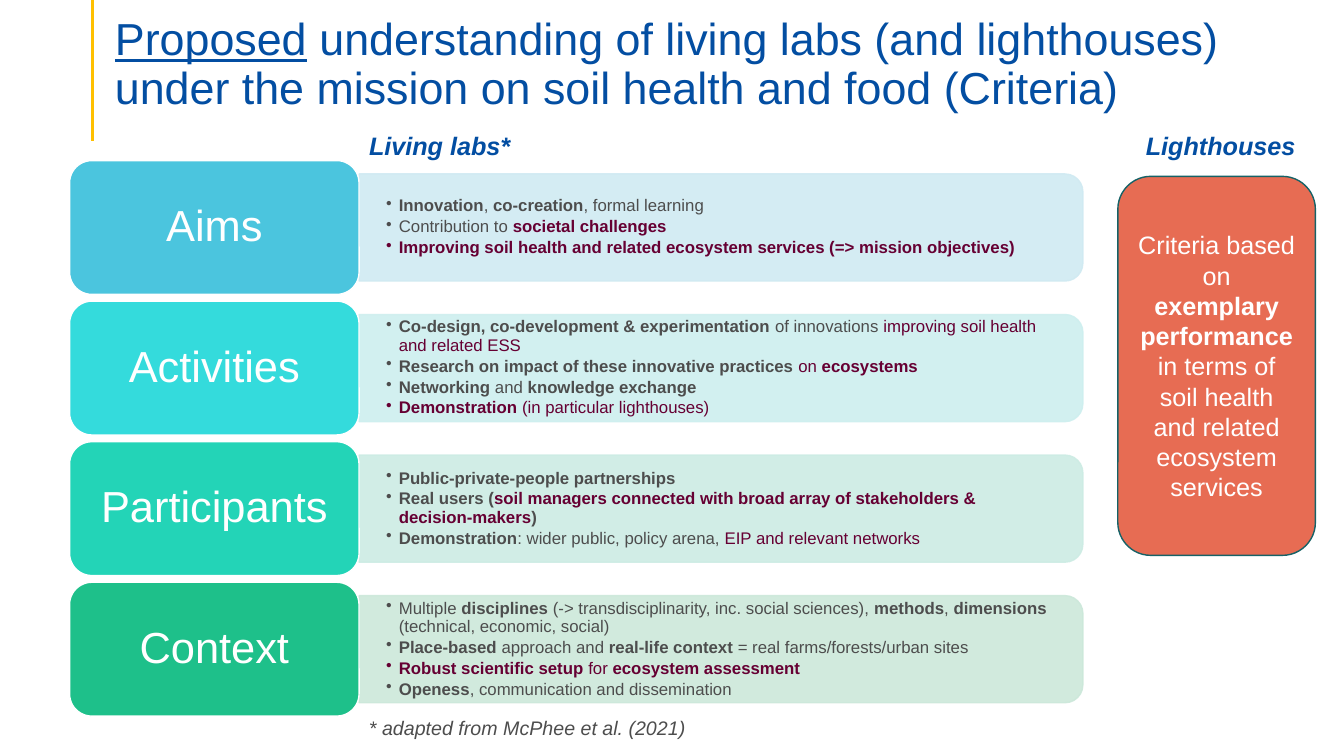
from dataclasses import dataclass

from lxml.etree import SubElement
from pptx import Presentation
from pptx.dml.color import RGBColor
from pptx.enum.shapes import MSO_CONNECTOR as Connector, MSO_SHAPE as Shape
from pptx.enum.text import MSO_ANCHOR as Anchor, MSO_AUTO_SIZE as AutoSize, PP_ALIGN as Align
from pptx.oxml.ns import qn
from pptx.util import Pt


@dataclass(frozen=True)
class Theme:
    """Colours and type sizes of the slide."""
    font: str = "Arial"
    blue: str = "034EA2"
    grey: str = "4D4D4D"
    plum: str = "660033"
    white: str = "FFFFFF"
    gold: str = "FFC000"
    coral: str = "E76C53"
    teal: str = "166267"
    title: int = 32
    label: int = 31
    heading: int = 18
    note: int = 14
    body: int = 12


THEME = Theme()
STYLES = {
    "": (THEME.grey, False),
    "bold": (THEME.grey, True),
    "plum": (THEME.plum, False),
    "bold plum": (THEME.plum, True),
}
CRITERIA = [
    ("Aims", "4BC5DE", "D0EAF2", [
        [("Innovation", "bold"), (", ", ""), ("co-creation", "bold"), (", formal learning", "")],
        [("Contribution to ", ""), ("societal challenges", "bold plum")],
        [("Improving soil health and related ecosystem services (=> mission objectives)",
          "bold plum")],
    ]),
    ("Activities", "34DBDC", "CEEFEF", [
        [("Co-design, co-development & experimentation ", "bold"), ("of innovations ", ""),
         ("improving soil health and related ESS", "plum")],
        [("Research on impact of these innovative practices ", "bold"), ("on ", "plum"),
         ("ecosystems", "bold plum")],
        [("Networking", "bold"), (" and ", ""), ("knowledge exchange", "bold")],
        [("Demonstration", "bold plum"), (" (in particular lighthouses)", "plum")],
    ]),
    ("Participants", "23D4B7", "CDECE4", [
        [("Public-private-people partnerships", "bold")],
        [("Real users (", "bold"),
         ("soil managers connected with broad array of stakeholders & decision-makers",
          "bold plum"), (")", "bold")],
        [("Demonstration", "bold"), (": wider public, policy arena, ", ""),
         ("EIP and relevant networks", "plum")],
    ]),
    ("Context", "1EC08A", "CCE8DA", [
        [("Multiple ", ""), ("disciplines ", "bold"),
         ("(-> transdisciplinarity, inc. social sciences), ", ""), ("methods", "bold"),
         (", ", ""), ("dimensions", "bold"), (" (technical, economic, social)", "")],
        [("Place-based", "bold"), (" approach and ", ""), ("real-life context ", "bold"),
         ("= real farms/forests/urban sites", "")],
        [("Robust scientific setup ", "bold plum"), ("for ", "plum"),
         ("ecosystem assessment", "bold plum")],
        [("Openess", "bold"), (", communication and dissemination", "")],
    ]),
]
LABEL_LEFT, LABEL_TOP, LABEL_WIDTH, LABEL_HEIGHT = 49.7, 114.7, 206.8, 95.6
PANEL_LEFT, PANEL_WIDTH, PANEL_HEIGHT = LABEL_LEFT + LABEL_WIDTH, 517, 76.5
BODY_WIDTH, BODY_HEIGHT = 513.4, 69.1
ROW_PITCH = 100.4


def assign(target, **formats):
    """Set each named attribute on the target."""
    for name, value in formats.items():
        setattr(target, name, value)


def set_frame(frame, anchor=Anchor.TOP, wrap=True, insets=(7.2, 3.6, 7.2, 3.6)):
    """Set wrapping, anchor and insets of a text frame."""
    left, top, right, bottom = map(Pt, insets)
    assign(frame, auto_size=AutoSize.NONE, word_wrap=wrap, vertical_anchor=anchor,
           margin_left=left, margin_top=top, margin_right=right, margin_bottom=bottom)


def add_span(para, text, size, color, **formats):
    """Append a formatted run to a paragraph."""
    span = para.add_run()
    span.text = text
    assign(span.font, name=THEME.font, size=Pt(size), **formats)
    span.font.color.rgb = RGBColor.from_string(color)


def add_block(page, kind, frame, fill, line, weight=1):
    """Add a flat filled shape with an outline."""
    block = page.shapes.add_shape(kind, *map(Pt, frame))
    block.shadow.inherit = False
    block.fill.solid()
    block.fill.fore_color.rgb = RGBColor.from_string(fill)
    block.line.color.rgb = RGBColor.from_string(line)
    block.line.width = Pt(weight)
    return block


def add_title(page):
    """Place and fill the title placeholder."""
    title = page.shapes.title
    assign(title, left=Pt(74.9), top=Pt(19.4), width=Pt(828), height=Pt(61.9))
    set_frame(title.text_frame, Anchor.BOTTOM, insets=(7.2, 3.6, 7.2, 0))
    para = title.text_frame.paragraphs[0]
    assign(para, alignment=Align.LEFT, line_spacing=0.9)
    add_span(para, "Proposed", THEME.title, THEME.blue, underline=True)
    add_span(para, " understanding of living labs (and lighthouses) under the mission "
             "on soil health and food (Criteria)", THEME.title, THEME.blue, underline=False)


def add_rule(page):
    """Draw the vertical line beside the title."""
    rule = page.shapes.add_connector(Connector.STRAIGHT, Pt(66.2), Pt(0), Pt(66.2), Pt(100.8))
    rule.line.color.rgb = RGBColor.from_string(THEME.gold)
    rule.line.width = Pt(2.25)
    SubElement(rule._element.spPr, qn("a:effectLst"))


def add_caption(page, text, frame, size, color, bold):
    """Add one line of italic text."""
    box = page.shapes.add_textbox(*map(Pt, frame))
    set_frame(box.text_frame, wrap=False)
    add_span(box.text_frame.paragraphs[0], text, size, color, bold=bold, italic=True)


def add_panel(page, middle, tint):
    """Add a translucent panel with rounded right corners, centred on a row."""
    frame = (PANEL_LEFT + (PANEL_WIDTH - PANEL_HEIGHT) / 2, middle - PANEL_WIDTH / 2,
             PANEL_HEIGHT, PANEL_WIDTH)
    panel = add_block(page, Shape.ROUND_2_SAME_RECTANGLE, frame, tint, tint)
    panel.rotation = 90
    for color in panel._element.spPr.iter(qn("a:srgbClr")):
        SubElement(color, qn("a:alpha"), val="90000")


def add_bullets(page, middle, points):
    """Add the bulleted text of a row."""
    box = page.shapes.add_textbox(Pt(PANEL_LEFT), Pt(middle - BODY_HEIGHT / 2),
                                  Pt(BODY_WIDTH), Pt(BODY_HEIGHT))
    frame = box.text_frame
    set_frame(frame, Anchor.MIDDLE, insets=(19.4, 10, 19.4, 10))
    for index, spans in enumerate(points):
        para = frame.add_paragraph() if index else frame.paragraphs[0]
        assign(para, line_spacing=0.9, space_after=Pt(2))
        properties = para._p.get_or_add_pPr()
        properties.set("marL", str(Pt(9)))
        properties.set("indent", str(-Pt(9)))
        SubElement(properties, qn("a:buChar"), char="•")
        for text, style in spans:
            color, bold = STYLES[style]
            add_span(para, text, THEME.body, color, bold=bold)


def add_label(page, top, text, fill):
    """Add the coloured heading block of a row."""
    label = add_block(page, Shape.ROUNDED_RECTANGLE,
                      (LABEL_LEFT, top, LABEL_WIDTH, LABEL_HEIGHT), fill, THEME.white)
    set_frame(label.text_frame, Anchor.MIDDLE, insets=(9.4, 4.3, 9.4, 4.3))
    para = label.text_frame.paragraphs[0]
    assign(para, alignment=Align.CENTER, line_spacing=0.9)
    add_span(para, text, THEME.label, THEME.white)


def add_lighthouse_card(page):
    """Add the card with the lighthouse criteria."""
    card = add_block(page, Shape.ROUNDED_RECTANGLE, (798.5, 126, 141.1, 270.7),
                     THEME.coral, THEME.teal)
    set_frame(card.text_frame, Anchor.MIDDLE)
    para = card.text_frame.paragraphs[0]
    para.alignment = Align.CENTER
    for text, bold in [("Criteria based on ", False), ("exemplary performance ", True),
                       ("in terms of soil health and related ecosystem services", False)]:
        add_span(para, text, THEME.heading, THEME.white, bold=bold)


def main():
    """Build the slide and save the deck."""
    deck = Presentation()
    assign(deck, slide_width=Pt(960), slide_height=Pt(540))
    page = deck.slides.add_slide(deck.slide_layouts[5])
    add_rule(page)
    add_title(page)
    for row, (name, fill, tint, points) in enumerate(CRITERIA):
        top = LABEL_TOP + row * ROW_PITCH
        middle = top + LABEL_HEIGHT / 2
        add_panel(page, middle, tint)
        add_bullets(page, middle, points)
        add_label(page, top, name, fill)
    add_caption(page, "Living labs*", (256.5, 89.3, 116.6, 28.8),
                THEME.heading, THEME.blue, True)
    add_caption(page, "* adapted from McPhee et al. (2021)", (256.5, 507.6, 241.9, 24.5),
                THEME.note, THEME.grey, False)
    add_lighthouse_card(page)
    add_caption(page, "Lighthouses", (811.4, 89.3, 122.4, 28.8),
                THEME.heading, THEME.blue, True)
    deck.save("out.pptx")


if __name__ == "__main__":
    main()
